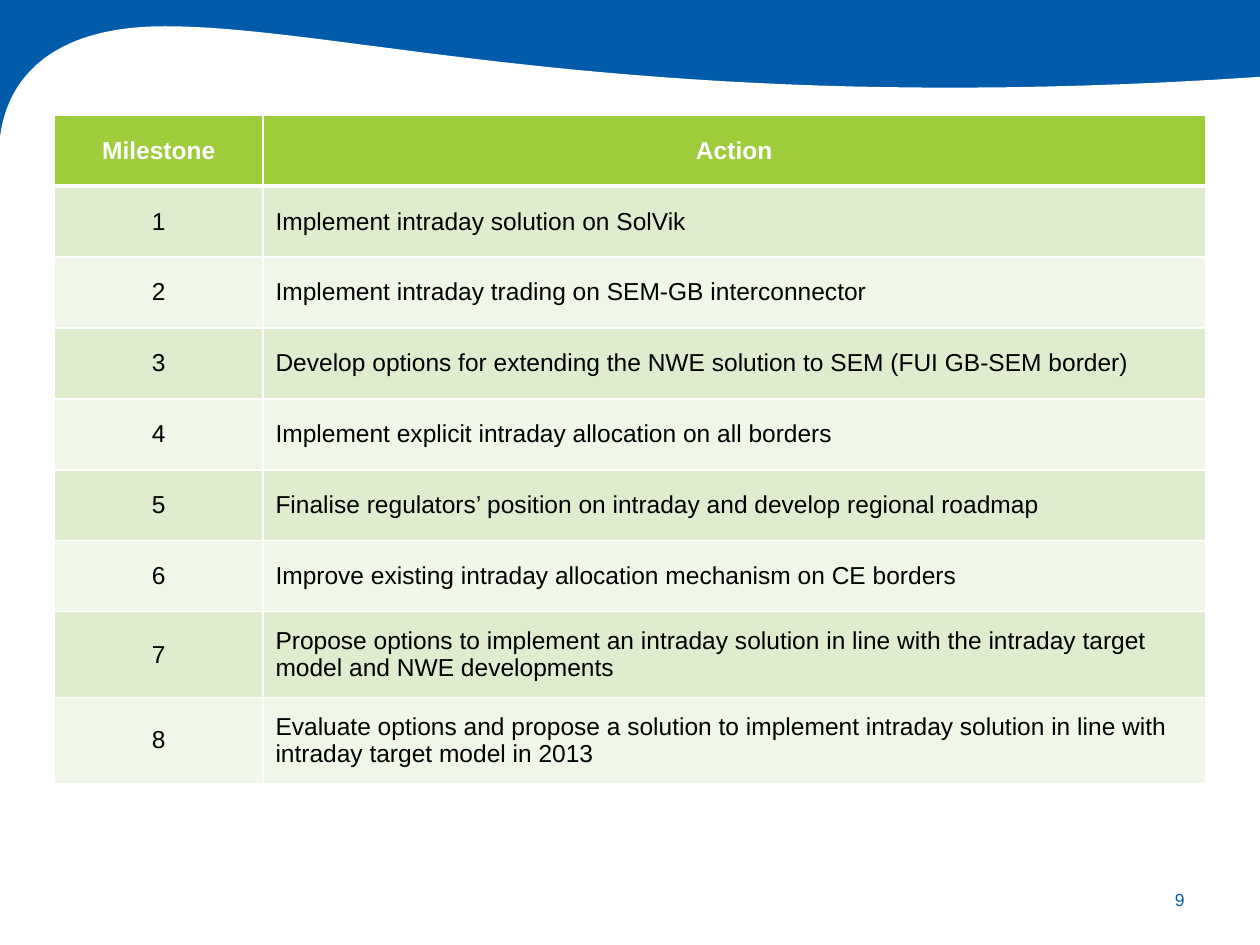
from lxml.etree import SubElement
from pptx import Presentation
from pptx.dml.color import RGBColor
from pptx.enum.shapes import MSO_SHAPE
from pptx.enum.text import MSO_ANCHOR, PP_ALIGN
from pptx.oxml.ns import qn
from pptx.util import Cm, Pt

BLUE = RGBColor(0x00, 0x5B, 0xAB)
GREEN = RGBColor(0x9E, 0xCC, 0x3B)
LIGHT_GREEN = RGBColor(0xDF, 0xEC, 0xCE)
PALE_GREEN = RGBColor(0xF0, 0xF6, 0xE8)
WHITE = RGBColor(0xFF, 0xFF, 0xFF)
BLACK = RGBColor(0x00, 0x00, 0x00)

WIDTH, HEIGHT = 25.4, 19.05
CURVE_STEPS = 40
ACTIONS = [
    "Implement intraday solution on SolVik",
    "Implement intraday trading on SEM-GB interconnector",
    "Develop options for extending the NWE solution to SEM (FUI GB-SEM border)",
    "Implement explicit intraday allocation on all borders",
    "Finalise regulators’ position on intraday and develop regional roadmap",
    "Improve existing intraday allocation mechanism on CE borders",
    "Propose options to implement an intraday solution in line with the "
    "intraday target model and NWE developments",
    "Evaluate options and propose a solution to implement intraday solution "
    "in line with intraday target model in 2013",
]


def add_run(paragraph, text, size, color, bold=False):
    run = paragraph.add_run()
    run.text = text
    run.font.name = "Arial"
    run.font.size = Pt(size)
    run.font.bold = bold
    run.font.color.rgb = color


def add_border(cell, side, points):
    """Draw a white border on one side of a cell: L, R, T or B."""
    line = SubElement(cell._tc.get_or_add_tcPr(), qn(f"a:ln{side}"), w=str(Pt(points)))
    fill = SubElement(line, qn("a:solidFill"))
    SubElement(fill, qn("a:srgbClr"), val=str(WHITE))


presentation = Presentation()
presentation.slide_width = Cm(WIDTH)
presentation.slide_height = Cm(HEIGHT)
slide = presentation.slides.add_slide(presentation.slide_layouts[6])

# Blue band with the white page curving over it
band = slide.shapes.add_shape(MSO_SHAPE.RECTANGLE, 0, 0, Cm(WIDTH), Cm(2.92))

wave_curves = [
    [(WIDTH, 1.55), (12.95, 2.39), (7.01, 0.53), (3.33, 0.53)],
    [(3.33, 0.53), (0.58, 0.53), (0.08, 2.03), (0, 2.79)],
]
wave_points = []
for curve in wave_curves:
    for step in range(1, CURVE_STEPS + 1):
        t = step / CURVE_STEPS
        weights = [(1 - t) ** 3, 3 * t * (1 - t) ** 2, 3 * t**2 * (1 - t), t**3]
        x, y = (sum(w * c for w, c in zip(weights, axis)) for axis in zip(*curve))
        wave_points.append((Cm(x), Cm(y)))
builder = slide.shapes.build_freeform(Cm(WIDTH), Cm(1.55))
builder.add_line_segments(
    wave_points + [(0, Cm(HEIGHT)), (Cm(WIDTH), Cm(HEIGHT))], close=True
)
page = builder.convert_to_shape()

for shape, color in [(band, BLUE), (page, WHITE)]:
    shape.shadow.inherit = False
    shape.fill.solid()
    shape.fill.fore_color.rgb = color
    shape.line.fill.background()

# Page number
number_box = slide.shapes.add_textbox(Cm(22.71), Cm(17.63), Cm(1.42), Cm(1.02))
number_box.text_frame.word_wrap = True
number_box.text_frame.vertical_anchor = MSO_ANCHOR.MIDDLE
paragraph = number_box.text_frame.paragraphs[0]
paragraph.alignment = PP_ALIGN.RIGHT
add_run(paragraph, "9", 10, BLUE)

# Milestone table
rows = [("Milestone", "Action")]
rows += [(str(number), action) for number, action in enumerate(ACTIONS, start=1)]
row_heights = [1.43] * 7 + [1.73] * 2
table = slide.shapes.add_table(
    len(rows), 2, Cm(1.1), Cm(2.32), Cm(23.2), Cm(sum(row_heights))
).table
table.columns[0].width = Cm(4.2)
table.columns[1].width = Cm(19)

for row_index, texts in enumerate(rows):
    table.rows[row_index].height = Cm(row_heights[row_index])
    is_header = row_index == 0
    if is_header:
        row_fill = GREEN
    else:
        row_fill = LIGHT_GREEN if row_index % 2 else PALE_GREEN
    for column_index, text in enumerate(texts):
        cell = table.cell(row_index, column_index)
        for side in "LRT":
            add_border(cell, side, 3 if side == "T" and row_index == 1 else 1)
        add_border(cell, "B", 3 if is_header else 1)
        cell.fill.solid()
        cell.fill.fore_color.rgb = row_fill
        cell.vertical_anchor = MSO_ANCHOR.MIDDLE
        paragraph = cell.text_frame.paragraphs[0]
        centred = is_header or column_index == 0
        paragraph.alignment = PP_ALIGN.CENTER if centred else PP_ALIGN.LEFT
        add_run(paragraph, text, 14, WHITE if is_header else BLACK, bold=is_header)

presentation.save("out.pptx")
